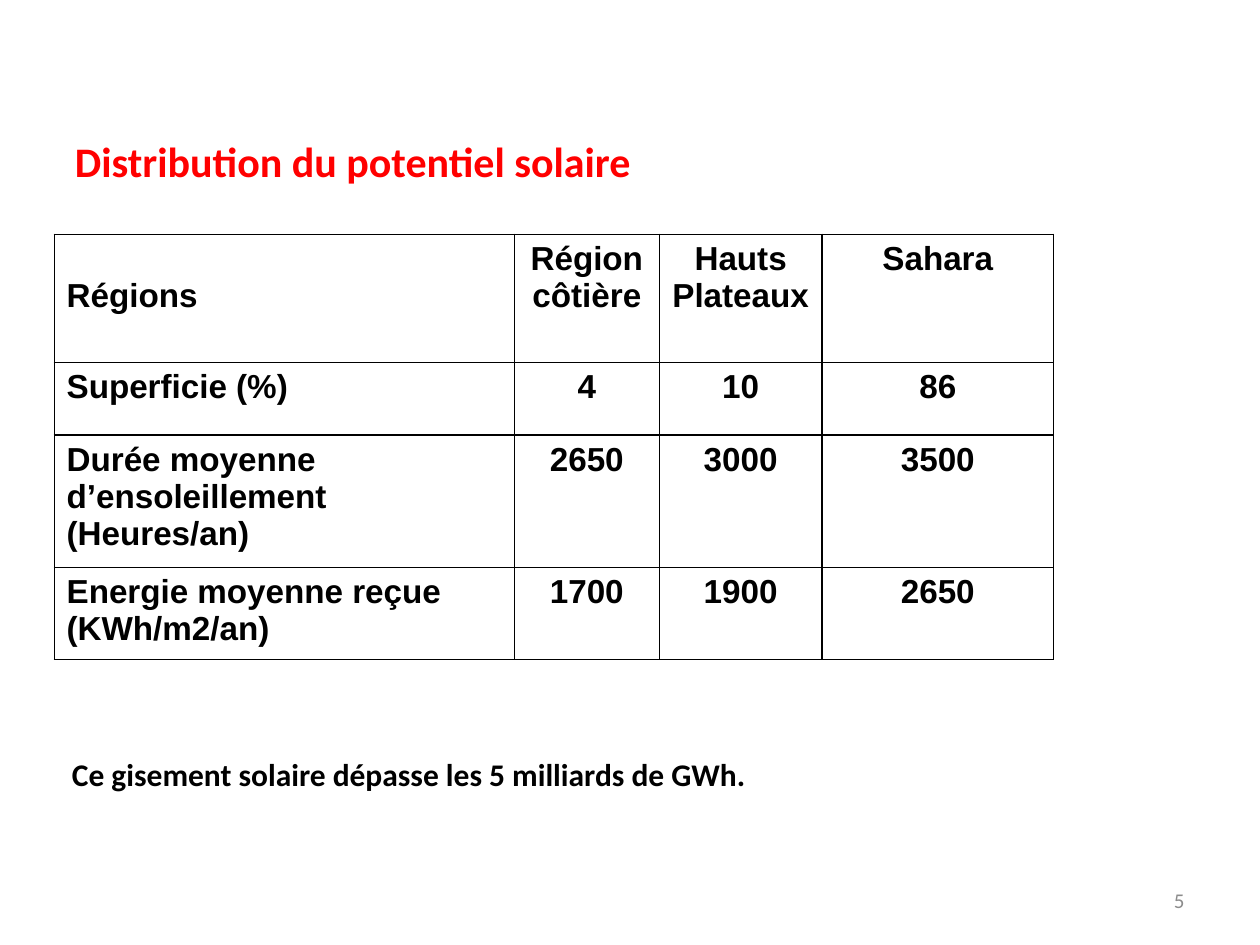
from dataclasses import dataclass

from lxml import etree
from pptx import Presentation
from pptx import util as u
from pptx.dml.color import RGBColor
from pptx.enum import text
from pptx.oxml.ns import qn

ALIGN = text.PP_ALIGN


@dataclass(frozen=True)
class Theme:
    ink: str = "000000"
    red: str = "FF0000"
    grey: str = "8C8C8C"
    body: str = "Calibri"
    grid: str = "Arial"
    title: int = 24
    note: int = 18
    cell: int = 19
    page: int = 12
    line: float = 0.75


class Deck:
    def __init__(self, theme):
        self.theme = theme
        self.prs = Presentation()
        self.prs.slide_width = u.Cm(25.4)
        self.prs.slide_height = u.Cm(19.05)
        self.slide = self.prs.slides.add_slide(self.prs.slide_layouts[6])

    def put(self, frame, words, align, color, **style):
        """Fill a text frame with one styled run."""
        para = frame.paragraphs[0]
        para.alignment = align
        run = para.add_run()
        run.text = words
        for key, val in style.items():
            setattr(run.font, key, val)
        run.font.color.rgb = RGBColor.from_string(color)

    def label(self, words, box, size, color, align, bold=True, wrap=True):
        frame = self.slide.shapes.add_textbox(*map(u.Cm, box)).text_frame
        frame.word_wrap = wrap
        frame.vertical_anchor = text.MSO_ANCHOR.MIDDLE
        self.put(frame, words, align, color,
                 name=self.theme.body, size=u.Pt(size), bold=bold)

    def edge(self, cell):
        """Draw a thin line on all four sides of a cell."""
        props = cell._tc.get_or_add_tcPr()
        for spot, side in enumerate(("a:lnL", "a:lnR", "a:lnT", "a:lnB")):
            line = etree.Element(qn(side), w=str(u.Pt(self.theme.line)))
            fill = etree.SubElement(line, qn("a:solidFill"))
            etree.SubElement(fill, qn("a:srgbClr"), val=self.theme.ink)
            props.insert(spot, line)

    def table(self, rows, left, top, widths, heights):
        box = map(u.Cm, (left, top, sum(widths), sum(heights)))
        grid = self.slide.shapes.add_table(len(rows), len(widths), *box).table
        grid.first_row = grid.horz_banding = False
        for col, width in zip(grid.columns, widths):
            col.width = u.Cm(width)
        for row, height in zip(grid.rows, heights):
            row.height = u.Cm(height)
        for r, row in enumerate(rows):
            for c, words in enumerate(row):
                cell = grid.cell(r, c)
                cell.fill.background()
                self.edge(cell)
                self.put(cell.text_frame, words,
                         ALIGN.CENTER if c else ALIGN.LEFT, self.theme.ink,
                         name=self.theme.grid, size=u.Pt(self.theme.cell),
                         bold=True)
        return grid


def main():
    theme = Theme()
    deck = Deck(theme)
    deck.label("5", (18.2, 17.65, 5.93, 1.01), theme.page, theme.grey,
               ALIGN.RIGHT, bold=False)
    deck.label("Distribution du potentiel solaire", (1.2, 2.6, 11.83, 1.28),
               theme.title, theme.red, ALIGN.CENTER, wrap=False)
    rows = [
        ("Régions", "Région côtière", "Hauts Plateaux", "Sahara"),
        ("Superficie (%)", "4", "10", "86"),
        ("Durée moyenne d’ensoleillement (Heures/an)", "2650", "3000", "3500"),
        ("Energie moyenne reçue (KWh/m2/an)", "1700", "1900", "2650"),
    ]
    grid = deck.table(rows, 1.09, 4.72, (9.28, 2.92, 3.28, 4.67),
                      (2.58, 1.47, 2.67, 1.83))
    grid.cell(0, 0).margin_top = u.Cm(0.87)
    deck.label("Ce gisement solaire dépasse les 5 milliards de GWh.",
               (1.2, 15.1, 16.36, 1.02), theme.note, theme.ink, ALIGN.JUSTIFY)
    deck.prs.save("out.pptx")


if __name__ == "__main__":
    main()
